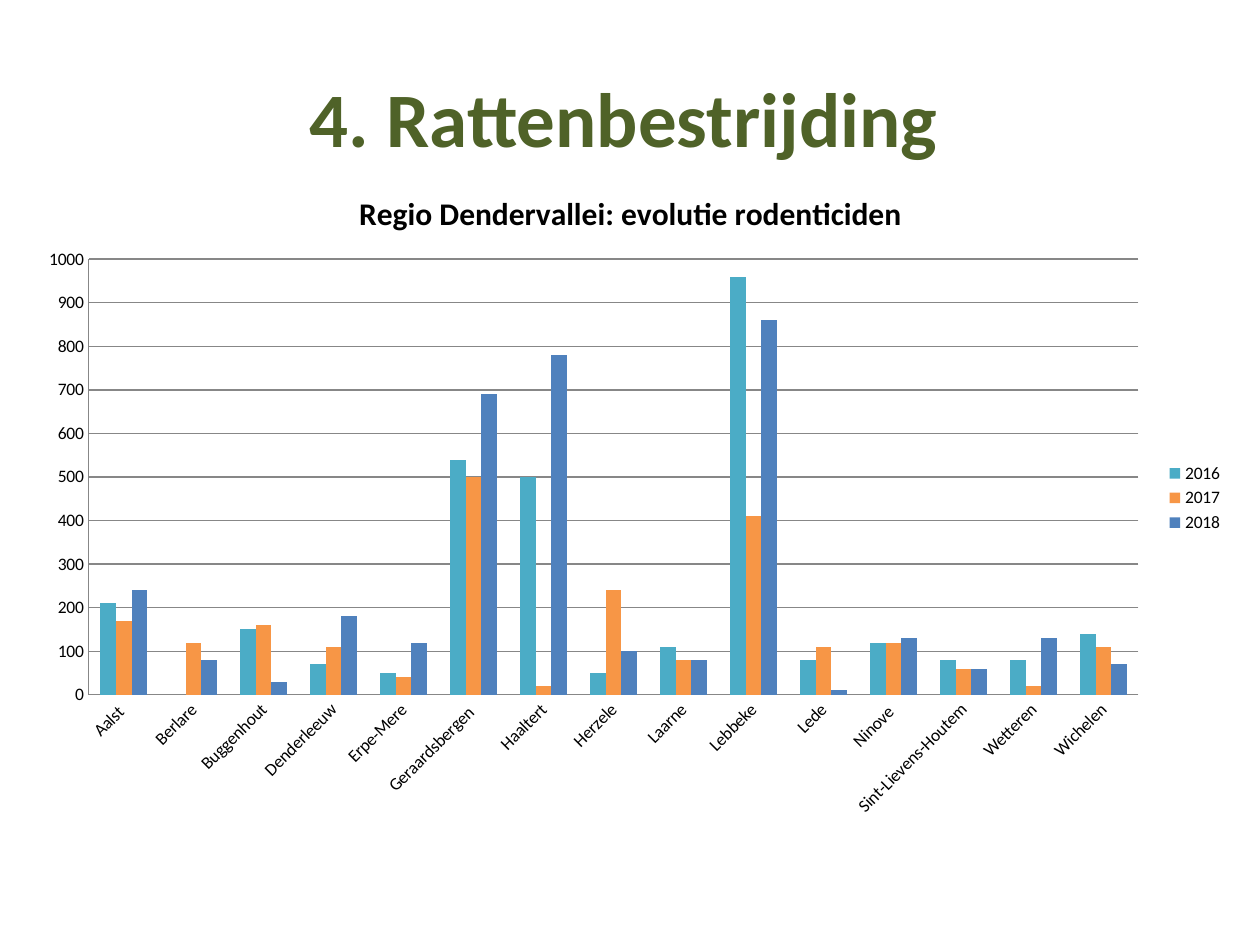
"""Build the slide on rodenticide use per municipality in the Dender valley."""
from dataclasses import dataclass
from typing import Optional

from lxml import etree
from pptx import Presentation, util as u
from pptx.chart.data import CategoryChartData
from pptx.dml.color import RGBColor
from pptx.enum import chart as ch, text as tx
from pptx.oxml import ns


@dataclass(frozen=True)
class Theme:
    font: str = "Calibri"
    heading: str = "4F6228"
    ink: str = "000000"
    rule: str = "878787"
    heading_size: int = 44
    heading_end_size: int = 31
    chart_title_size: int = 18
    label_size: int = 10


@dataclass(frozen=True)
class Area:
    left: float
    top: float
    width: float
    height: float


@dataclass(frozen=True)
class Year:
    name: str
    color: str
    amounts: tuple[Optional[int], ...]


THEME = Theme()
WIDTH, HEIGHT = u.Inches(10), u.Inches(7.5)
HEADING_AREA = Area(0.05, 0.04, 0.9, 1 / 6)
CHART_AREA = Area(0.02, 0.175, 0.961, 0.704)
PLOT_AREA = Area(0.0525, 0.141, 0.867, 0.655)
LABEL_ANGLE = -45

MUNICIPALITIES = (
    "Aalst ", "Berlare", "Buggenhout", "Denderleeuw", "Erpe-Mere",
    "Geraardsbergen ", "Haaltert", "Herzele", "Laarne", "Lebbeke",
    "Lede", "Ninove ", "Sint-Lievens-Houtem", "Wetteren", "Wichelen",
)
YEARS = (
    Year("2016", "4BACC6", (210, None, 150, 70, 50, 540, 500, 50, 110, 960, 80, 120, 80, 80, 140)),
    Year("2017", "F79646", (170, 120, 160, 110, 40, 500, 20, 240, 80, 410, 110, 120, 60, 20, 110)),
    Year("2018", "4F81BD", (240, 80, 30, 180, 120, 690, 780, 100, 80, 860, 10, 130, 60, 130, 70)),
)


def place(area: Area) -> tuple[int, int, int, int]:
    """Turn shares of the slide into left, top, width and height."""
    return (int(area.left * WIDTH), int(area.top * HEIGHT),
            int(area.width * WIDTH), int(area.height * HEIGHT))


def style(font, size: int, color: str, bold: bool = False) -> None:
    """Apply the theme font with a size, colour and weight."""
    font.name, font.size, font.bold = THEME.font, u.Pt(size), bold
    font.color.rgb = RGBColor.from_string(color)


def rule(line) -> None:
    """Draw an axis or grid line in the theme's grey."""
    line.color.rgb = RGBColor.from_string(THEME.rule)
    line.width = u.Pt(0.75)


def write_heading(heading, wording: str) -> None:
    """Place and format the slide title."""
    heading.left, heading.top, heading.width, heading.height = place(HEADING_AREA)
    frame = heading.text_frame
    frame.text = wording
    frame.vertical_anchor = tx.MSO_ANCHOR.MIDDLE
    line = frame.paragraphs[0]
    line.alignment = tx.PP_ALIGN.CENTER
    style(line.runs[0].font, THEME.heading_size, THEME.heading, True)
    ending = line.add_run()
    ending.text = " "
    style(ending.font, THEME.heading_end_size, THEME.heading, True)


def fix_plot(chart, area: Area) -> None:
    """Pin the inner plot area to shares of the chart."""
    plot = chart._chartSpace.xpath("c:chart/c:plotArea")[0]
    for former in plot.xpath("c:layout"):
        plot.remove(former)
    layout = etree.Element(ns.qn("c:layout"))
    manual = etree.SubElement(layout, ns.qn("c:manualLayout"))
    settings = {
        "layoutTarget": "inner", "xMode": "edge", "yMode": "edge",
        "x": area.left, "y": area.top, "w": area.width, "h": area.height,
    }
    for tag, setting in settings.items():
        etree.SubElement(manual, ns.qn(f"c:{tag}")).set("val", str(setting))
    plot.insert(0, layout)


def format_axes(chart) -> None:
    """Set scale, lines and slanted labels of both axes."""
    municipalities, amounts = chart.category_axis, chart.value_axis
    for axis in (municipalities, amounts):
        axis.major_tick_mark = axis.minor_tick_mark = ch.XL_TICK_MARK.NONE
        rule(axis.format.line)
        style(axis.tick_labels.font, THEME.label_size, THEME.ink)
    amounts.minimum_scale, amounts.maximum_scale, amounts.major_unit = 0, 1000, 100
    amounts.has_major_gridlines = True
    rule(amounts.major_gridlines.format.line)
    slant = municipalities._element.xpath("c:txPr/a:bodyPr")[0]
    slant.set("rot", str(LABEL_ANGLE * 60000))
    slant.set("vert", "horz")


def add_evolution(slide, wording: str, years: tuple[Year, ...]) -> None:
    """Add the clustered columns, one series a year."""
    figures = CategoryChartData()
    figures.categories = MUNICIPALITIES
    for year in years:
        figures.add_series(year.name, year.amounts)
    chart = slide.shapes.add_chart(
        ch.XL_CHART_TYPE.COLUMN_CLUSTERED, *place(CHART_AREA), figures).chart
    style(chart.font, THEME.label_size, THEME.ink)

    chart.has_title = True
    chart.chart_title.include_in_layout = False
    caption = chart.chart_title.text_frame
    caption.text = wording
    line = caption.paragraphs[0]
    for font in (line.font, line.runs[0].font):
        style(font, THEME.chart_title_size, THEME.ink, True)

    chart.has_legend = True
    chart.legend.position = ch.XL_LEGEND_POSITION.RIGHT
    chart.legend.include_in_layout = False
    style(chart.legend.font, THEME.label_size, THEME.ink)

    columns = chart.plots[0]
    columns.vary_by_categories = False
    columns.gap_width, columns.overlap = 150, 0
    for series, year in zip(columns.series, years):
        series.format.fill.solid()
        series.format.fill.fore_color.rgb = RGBColor.from_string(year.color)
        series.invert_if_negative = False
    format_axes(chart)
    fix_plot(chart, PLOT_AREA)


def main() -> None:
    """Build and save the slide."""
    deck = Presentation()
    deck.slide_width, deck.slide_height = WIDTH, HEIGHT
    slide = deck.slides.add_slide(deck.slide_layouts.get_by_name("Title Only"))
    write_heading(slide.shapes.title, "4. Rattenbestrijding")
    add_evolution(slide, "Regio Dendervallei: evolutie rodenticiden", YEARS)
    deck.save("out.pptx")


if __name__ == "__main__":
    main()
